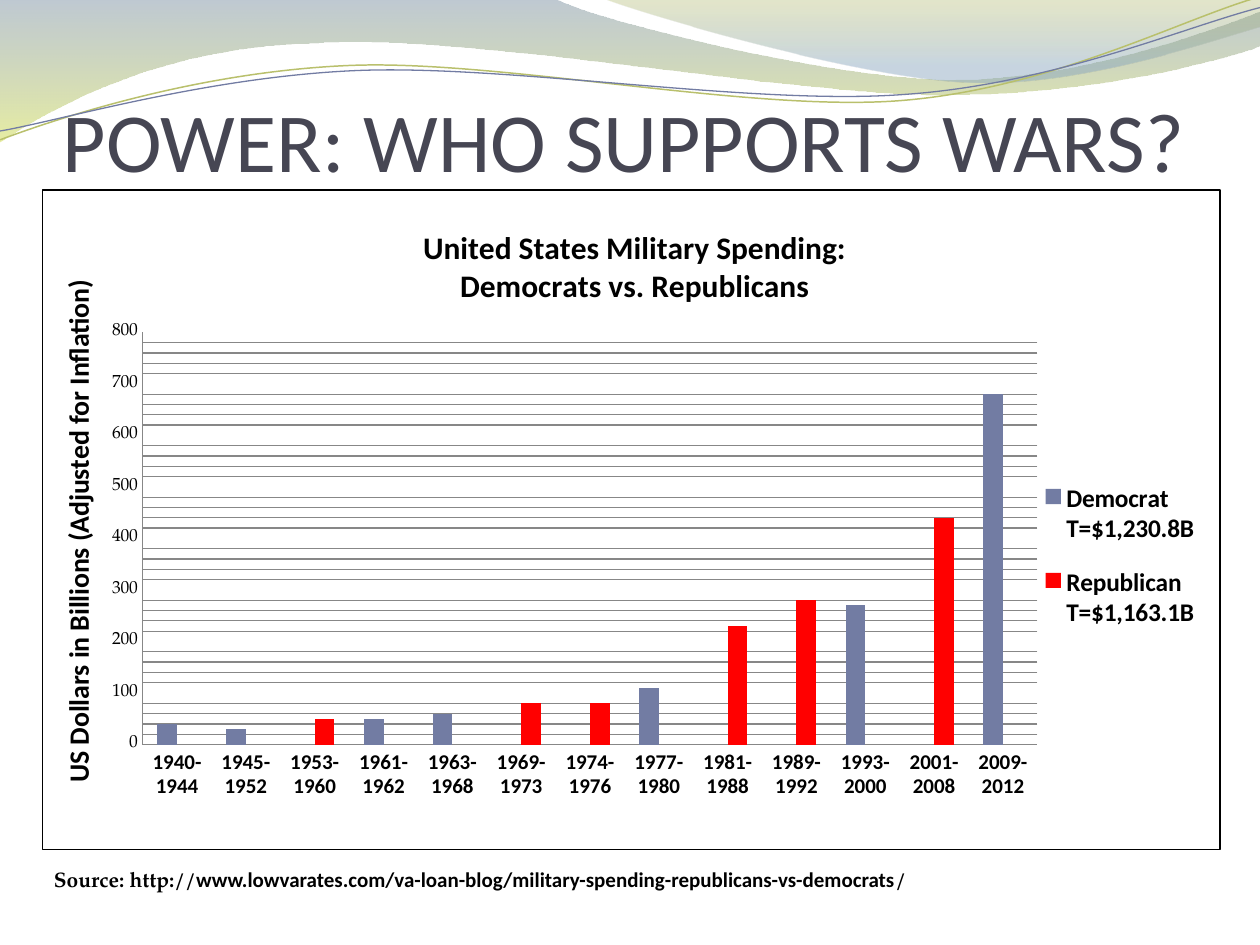
from dataclasses import dataclass
from math import cos, radians, sin

from lxml import etree
from pptx import Presentation
from pptx.chart.data import CategoryChartData
from pptx.dml.color import RGBColor
from pptx.enum.chart import XL_CHART_TYPE as ChartType, XL_LEGEND_POSITION as LegendSide
from pptx.enum.chart import XL_TICK_MARK as TickMark
from pptx.enum.text import MSO_ANCHOR as Anchor
from pptx.oxml import parse_xml
from pptx.oxml.ns import nsdecls, qn
from pptx.util import Inches, Pt


@dataclass(frozen=True)
class Theme:
    sans: str = "Calibri"
    serif: str = "TeX Gyre Pagella"
    black: str = "000000"
    white: str = "FFFFFF"
    heading: str = "464653"
    slate: str = "727CA3"
    red: str = "FF0000"
    olive: str = "B9C06C"
    grid: str = "878787"
    title_size: float = 48
    chart_title_size: float = 18
    axis_title_size: float = 16
    legend_size: float = 14.5
    label_size: float = 12
    tick_size: float = 10


# Waves: a start point, then cubic curves (three points) or lines (one point)
LEFT_WAVE = [[(0, 0)], [(4.4, -0.01)],
             [(4.76, 0.17), (6.64, 0.63), (7.58, 0.63)],
             [(8.53, 0.63), (9.58, 0.26), (10, 0.09)],
             [(10.01, 0.36)],
             [(9.83, 0.44), (8.7, 0.76), (7.46, 0.75)],
             [(6.22, 0.75), (3.82, 0.28), (2.57, 0.34)],
             [(1.29, 0.36), (0.46, 0.83), (-0.01, 1.13)]]
RIGHT_WAVE = [[(4.79, -0.01)],
              [(5.09, 0.11), (6.82, 0.62), (7.69, 0.65)],
              [(8.56, 0.69), (9.61, 0.32), (10, 0.21)],
              [(10, 0)]]
OLIVE_CURVE = [[(0, 1.11)],
               [(0.48, 0.93), (1.58, 0.57), (2.77, 0.52)],
               [(3.95, 0.47), (5.93, 0.89), (7.13, 0.8)],
               [(8.33, 0.71), (9.38, 0.15), (9.98, -0.02)]]
SLATE_CURVE = [[(0, 1.04)],
               [(0.47, 0.96), (1.64, 0.61), (2.83, 0.56)],
               [(4.03, 0.51), (5.97, 0.84), (7.17, 0.75)],
               [(8.36, 0.67), (9.41, 0.21), (10, 0.06)]]
CURVE_CENTER, CURVE_TILT = (4.99, 0.58), -2.7

# Spending by period, in billions
DEMOCRAT, REPUBLICAN = "Democrat\nT=$1,230.8B", "Republican\nT=$1,163.1B"
SPENDING = [("1940-1944", DEMOCRAT, 40), ("1945-1952", DEMOCRAT, 30),
            ("1953-1960", REPUBLICAN, 50), ("1961-1962", DEMOCRAT, 50),
            ("1963-1968", DEMOCRAT, 60), ("1969-1973", REPUBLICAN, 80),
            ("1974-1976", REPUBLICAN, 80), ("1977-1980", DEMOCRAT, 110),
            ("1981-1988", REPUBLICAN, 230), ("1989-1992", REPUBLICAN, 280),
            ("1993-2000", DEMOCRAT, 270), ("2001-2008", REPUBLICAN, 440),
            ("2009-2012", DEMOCRAT, 680)]


def turn(wave, center, degrees):
    """Rotate every point of a wave clockwise about a center."""
    angle, (cx, cy) = radians(degrees), center
    return [[(cx + (x - cx) * cos(angle) - (y - cy) * sin(angle),
              cy + (x - cx) * sin(angle) + (y - cy) * cos(angle)) for x, y in piece]
            for piece in wave]


def place(element, index, x, y, width=None, height=None, inner=False):
    """Give a chart part a fixed place, as fractions of the chart."""
    for old in element.findall(qn("c:layout")):
        element.remove(old)
    values = [("layoutTarget", "inner")] if inner else []
    values += [("xMode", "edge"), ("yMode", "edge"), ("x", x), ("y", y)]
    if width:
        values += [("w", width), ("h", height)]
    rows = "".join(f'<c:{tag} val="{value}"/>' for tag, value in values)
    element.insert(index, parse_xml(
        f'<c:layout {nsdecls("c")}><c:manualLayout>{rows}</c:manualLayout></c:layout>'))


def outline(color, width, fill=None):
    """Shape properties for chart parts that have no format object."""
    solid = f'<a:solidFill><a:srgbClr val="{fill}"/></a:solidFill>' if fill else ""
    return parse_xml(
        f'<c:spPr {nsdecls("c", "a")}>{solid}<a:ln w="{Pt(width)}"><a:solidFill>'
        f'<a:srgbClr val="{color}"/></a:solidFill></a:ln></c:spPr>')


class SlideMaker:
    def __init__(self, page, theme):
        self.page, self.theme = page, theme

    def style(self, font, size, name, bold=False, color=None):
        font.size, font.name, font.bold = Pt(size), name, bold
        font.color.rgb = RGBColor.from_string(color or self.theme.black)

    def freeform(self, wave, closed):
        ends = [tuple(map(Inches, piece[-1])) for piece in wave]
        builder = self.page.shapes.build_freeform(*ends[0])
        builder.add_line_segments(ends[1:], close=closed)
        shape = builder.convert_to_shape()
        shape.shadow.inherit = False
        # Bend the straight segments that have control points
        segments = list(shape._element.iter(qn("a:lnTo")))
        for segment, piece in zip(segments, wave[1:]):
            if len(piece) == 3:
                segment.tag = qn("a:cubicBezTo")
                for index, (x, y) in enumerate(piece[:2]):
                    segment.insert(index, etree.Element(
                        qn("a:pt"), x=str(Inches(x) - shape.left), y=str(Inches(y) - shape.top)))
        return shape

    def band(self, wave, stops):
        shape = self.freeform(wave, closed=True)
        shape.line.fill.background()
        shape.fill.gradient()
        shape.fill.gradient_angle = 270
        for stop, (position, color, _) in zip(shape.fill.gradient_stops, stops):
            stop.position = position
            stop.color.rgb = RGBColor.from_string(color)
        colors = shape._element.spPr.iter(qn("a:srgbClr"))
        for color, (_, _, opacity) in zip(colors, stops):
            etree.SubElement(color, qn("a:alpha"), val=str(opacity * 1000))

    def curve(self, wave, color, width):
        shape = self.freeform(turn(wave, CURVE_CENTER, -CURVE_TILT), closed=False)
        shape.rotation = CURVE_TILT
        shape.fill.background()
        shape.line.color.rgb = RGBColor.from_string(color)
        shape.line.width = Pt(width)

    def text(self, left, top, width, height, spans, size, color=None, bold=False,
             inset=0.1, bottom=0.05, anchor=Anchor.TOP):
        box = self.page.shapes.add_textbox(*map(Inches, (left, top, width, height)))
        frame = box.text_frame
        frame.word_wrap, frame.vertical_anchor = True, anchor
        frame.margin_left = frame.margin_right = Inches(inset)
        frame.margin_bottom = Inches(bottom)
        para = frame.paragraphs[0]
        for words, name in spans:
            span = para.add_run()
            span.text = words
            self.style(span.font, size, name, bold, color)

    def heading(self, owner, lines, size):
        frame = owner.text_frame
        frame.text = lines
        for para in frame.paragraphs:
            self.style(para.font, size, self.theme.sans, bold=True)

    def column_chart(self, left, top, width, height, rows, colors, title, axis_title):
        theme = self.theme
        data = CategoryChartData()
        data.categories = [period for period, _, _ in rows]
        for party in colors:
            data.add_series(party, [value if owner == party else None
                                    for _, owner, value in rows])
        chart = self.page.shapes.add_chart(
            ChartType.COLUMN_CLUSTERED, *map(Inches, (left, top, width, height)), data).chart
        self.style(chart.font, theme.tick_size, theme.serif)
        chart._chartSpace.find(qn("c:chart")).addnext(outline(theme.black, 1.1, theme.white))

        # Columns
        plot = chart.plots[0]
        plot.gap_width, plot.overlap, plot.vary_by_categories = 150, 0, False
        for series, color in zip(plot.series, colors.values()):
            series.format.fill.solid()
            series.format.fill.fore_color.rgb = RGBColor.from_string(color)
        place(chart._chartSpace.find(".//" + qn("c:plotArea")), 0,
              0.085, 0.216, 0.76, 0.625, inner=True)

        # Axes
        periods, dollars = chart.category_axis, chart.value_axis
        for axis in (periods, dollars):
            axis.major_tick_mark = axis.minor_tick_mark = TickMark.NONE
            axis.format.line.color.rgb = RGBColor.from_string(theme.grid)
            axis.format.line.width = Pt(0.75)
        self.style(periods.tick_labels.font, theme.label_size, theme.sans, bold=True)
        dollars.minimum_scale, dollars.maximum_scale = 0, 800
        dollars.major_unit, dollars.minor_unit = 100, 20
        dollars.has_major_gridlines, dollars.has_minor_gridlines = False, True
        dollars._element.find(qn("c:minorGridlines")).append(outline(theme.grid, 0.75))

        # Titles and legend
        chart.has_title = True
        self.heading(chart.chart_title, title, theme.chart_title_size)
        place(chart.chart_title._element, 1, 0.32, 0.05)
        self.heading(dollars.axis_title, axis_title, theme.axis_title_size)
        place(dollars.axis_title._element, 1, 0.01, 0.13)
        chart.has_legend = True
        chart.legend.position = LegendSide.RIGHT
        chart.legend.include_in_layout = False
        self.style(chart.legend.font, theme.legend_size, theme.sans, bold=True)
        place(chart.legend._element, 1, 0.84, 0.41, 0.15, 0.29)


def main():
    deck = Presentation()
    deck.slide_width, deck.slide_height = Inches(10), Inches(7.5)
    theme = Theme()
    maker = SlideMaker(deck.slides.add_slide(deck.slide_layouts[6]), theme)

    # Wave decoration
    maker.band(LEFT_WAVE, [(0, "72889B", 45), (1, "D3DE57", 55)])
    maker.band(RIGHT_WAVE, [(0, "A4AC50", 30), (0.8, "84A3BD", 45)])
    maker.curve(OLIVE_CURVE, theme.olive, 0.85)
    maker.curve(SLATE_CURVE, theme.slate, 0.75)

    # Title and source
    maker.text(0.5, 0.5, 9, 1, [("POWER: WHO SUPPORTS WARS?", theme.sans)], theme.title_size,
               theme.heading, inset=0, bottom=0, anchor=Anchor.BOTTOM)
    address = "www.lowvarates.com/va-loan-blog/military-spending-republicans-vs-democrats"
    maker.text(0.33, 6.83, 9.17, 0.42,
               [("Source: http://", theme.serif), (address, theme.sans), ("/", theme.serif)],
               theme.label_size, bold=True)

    # Spending chart
    maker.column_chart(0.33, 1.5, 9.36, 5.25, SPENDING,
                       {DEMOCRAT: theme.slate, REPUBLICAN: theme.red},
                       "United States Military Spending:\nDemocrats vs. Republicans",
                       "US Dollars in Billions (Adjusted for Inflation)")
    deck.save("out.pptx")


if __name__ == "__main__":
    main()
